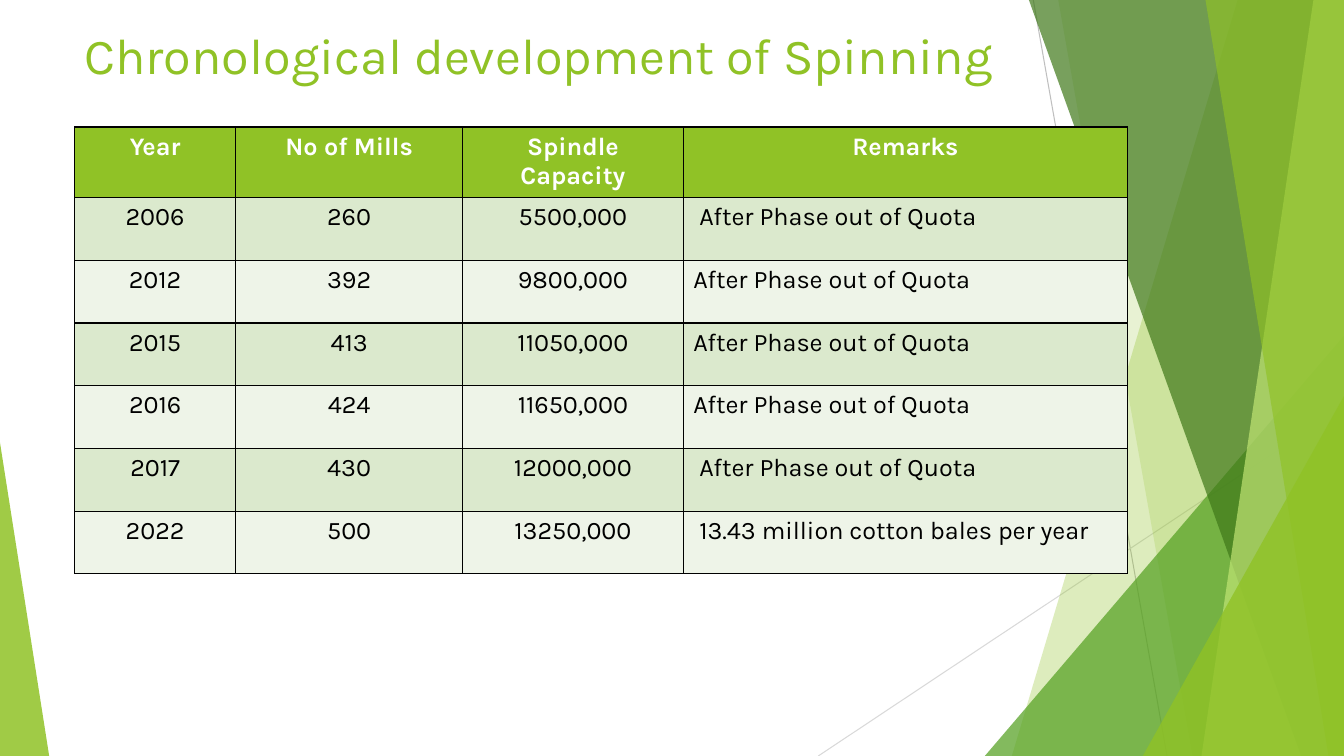
from lxml.etree import SubElement
from pptx import Presentation
from pptx.dml.color import RGBColor
from pptx.enum.shapes import MSO_CONNECTOR as Connector, MSO_SHAPE as Shape
from pptx.enum.text import MSO_ANCHOR as Anchor, PP_ALIGN as Align
from pptx.oxml.ns import qn
from pptx.util import Cm, Pt

LIME = RGBColor(0x90, 0xC2, 0x26)
PALE_LIME = RGBColor(0xC0, 0xE4, 0x74)
LEAF = RGBColor(0x54, 0xA0, 0x21)
FOREST = RGBColor(0x3F, 0x78, 0x19)
BAND_DARK = RGBColor(0xDB, 0xE9, 0xCD)
BAND_LIGHT = RGBColor(0xEE, 0xF4, 0xE8)
GREY = RGBColor(0xBF, 0xBF, 0xBF)
LIGHT_GREY = RGBColor(0xD9, 0xD9, 0xD9)
BLACK = RGBColor(0, 0, 0)
WHITE = RGBColor(0xFF, 0xFF, 0xFF)

PAGE_WIDTH, PAGE_HEIGHT = 33.87, 19.05

# Top left x, bottom left x, colour, opacity in percent
BACK_BANDS = [(31.19, 25.5, LIME, 30), (26.67, 30.05, LIME, 20)]
FRONT_BANDS = [
    (25.93, 32.79, FOREST, 70),
    (33.1, 30.28, PALE_LIME, 70),
    (30.38, 33.48, LIME, 65),
]

COLUMN_WIDTHS = [4.06, 5.72, 5.56, 11.2]
ROW_HEIGHT = 1.58
MILL_ROWS = [
    ("Year", "No of Mills", "Spindle Capacity", "Remarks"),
    ("2006", "260", "5500,000", " After Phase out of Quota"),
    ("2012", "392", "9800,000", "After Phase out of Quota"),
    ("2015", "413", "11050,000", "After Phase out of Quota"),
    ("2016", "424", "11650,000", "After Phase out of Quota"),
    ("2017", "430", "12000,000", " After Phase out of Quota"),
    ("2022", "500", "13250,000", " 13.43 million cotton bales per year"),
]


def write_text(frame, text, size=18, color=BLACK, bold=False, align=Align.LEFT):
    frame.word_wrap = True
    para = frame.paragraphs[0]
    para.alignment = align
    span = para.add_run()
    span.text = text
    span.font.name = "Karla"
    span.font.size = Pt(size)
    span.font.bold = bold
    span.font.color.rgb = color


def add_solid_fill(parent, color, opacity=100):
    fill = SubElement(parent, qn("a:solidFill"))
    SubElement(fill, qn("a:srgbClr"), val=str(color))
    return fill


def add_cell_borders(cell):
    properties = cell._tc.get_or_add_tcPr()
    for position, side in enumerate(("a:lnL", "a:lnR", "a:lnT", "a:lnB")):
        border = SubElement(properties, qn(side), w=str(Pt(1)))
        add_solid_fill(border, BLACK)
        properties.remove(border)
        properties.insert(position, border)


class SlideBuilder:
    def __init__(self, page):
        self.page = page

    def paint(self, shape, color, opacity):
        shape.shadow.inherit = False
        shape.line.fill.background()
        shape.fill.solid()
        shape.fill.fore_color.rgb = color
        tint = shape._element.spPr.find(qn("a:solidFill"))[0]
        SubElement(tint, qn("a:alpha"), val=str(opacity * 1000))

    def line(self, start, end, color):
        ends = [Cm(value) for value in (*start, *end)]
        connector = self.page.shapes.add_connector(Connector.STRAIGHT, *ends)
        connector.line.color.rgb = color
        connector.line.width = Pt(0.75)
        SubElement(connector._element.spPr, qn("a:effectLst"))

    def band(self, top_x, bottom_x, color, opacity):
        """Fill from a slanted left edge to the right side of the page."""
        corners = [
            (PAGE_WIDTH, 0), (PAGE_WIDTH, PAGE_HEIGHT), (bottom_x, PAGE_HEIGHT),
        ]
        outline = self.page.shapes.build_freeform(Cm(top_x), 0)
        outline.add_line_segments([(Cm(x), Cm(y)) for x, y in corners])
        self.paint(outline.convert_to_shape(), color, opacity)

    def triangle(self, left, top, width, peak, color, opacity):
        """Stand a triangle on the bottom of the page; peak 0 is left, 1 right."""
        shape = self.page.shapes.add_shape(
            Shape.ISOSCELES_TRIANGLE,
            Cm(left), Cm(top), Cm(width), Cm(PAGE_HEIGHT - top),
        )
        shape.adjustments[0] = peak
        self.paint(shape, color, opacity)

    def title(self, text, left, top, width, height):
        box = self.page.shapes.add_textbox(
            Cm(left), Cm(top), Cm(width), Cm(height)
        )
        box.text_frame.margin_top = Cm(0.25)
        box.text_frame.vertical_anchor = Anchor.TOP
        write_text(box.text_frame, text, size=36, color=LIME)

    def table(self, rows, left, top):
        table = self.page.shapes.add_table(
            len(rows), len(COLUMN_WIDTHS), Cm(left), Cm(top),
            Cm(sum(COLUMN_WIDTHS)), Cm(ROW_HEIGHT * len(rows)),
        ).table
        for column, width in zip(table.columns, COLUMN_WIDTHS):
            column.width = Cm(width)
        for r, values in enumerate(rows):
            table.rows[r].height = Cm(ROW_HEIGHT)
            header = r == 0
            band = BAND_DARK if r % 2 else BAND_LIGHT
            for c, value in enumerate(values):
                cell = table.cell(r, c)
                cell.fill.solid()
                cell.fill.fore_color.rgb = LIME if header else band
                add_cell_borders(cell)
                remark = c == len(values) - 1 and not header
                write_text(
                    cell.text_frame, value, bold=header,
                    color=WHITE if header else BLACK,
                    align=Align.LEFT if remark else Align.CENTER,
                )


def main():
    deck = Presentation()
    deck.slide_width, deck.slide_height = Cm(PAGE_WIDTH), Cm(PAGE_HEIGHT)
    builder = SlideBuilder(deck.slides.add_slide(deck.slide_layouts[6]))

    builder.line((26.04, 0), (29.41, PAGE_HEIGHT), GREY)
    builder.line((PAGE_WIDTH, 10.24), (20.62, PAGE_HEIGHT), LIGHT_GREY)
    for band in BACK_BANDS:
        builder.band(*band)
    builder.triangle(24.82, 8.46, 9.05, 1, LEAF, 72)
    for band in FRONT_BANDS:
        builder.band(*band)
    builder.triangle(28.8, 9.98, 5.07, 1, LIME, 80)
    builder.triangle(0, 11.15, 1.24, 0, LIME, 85)

    builder.title("Chronological development of Spinning", 1.88, 0.36, 23.88, 2.18)
    builder.table(MILL_ROWS, 1.88, 3.2)
    deck.save("out.pptx")


if __name__ == "__main__":
    main()
